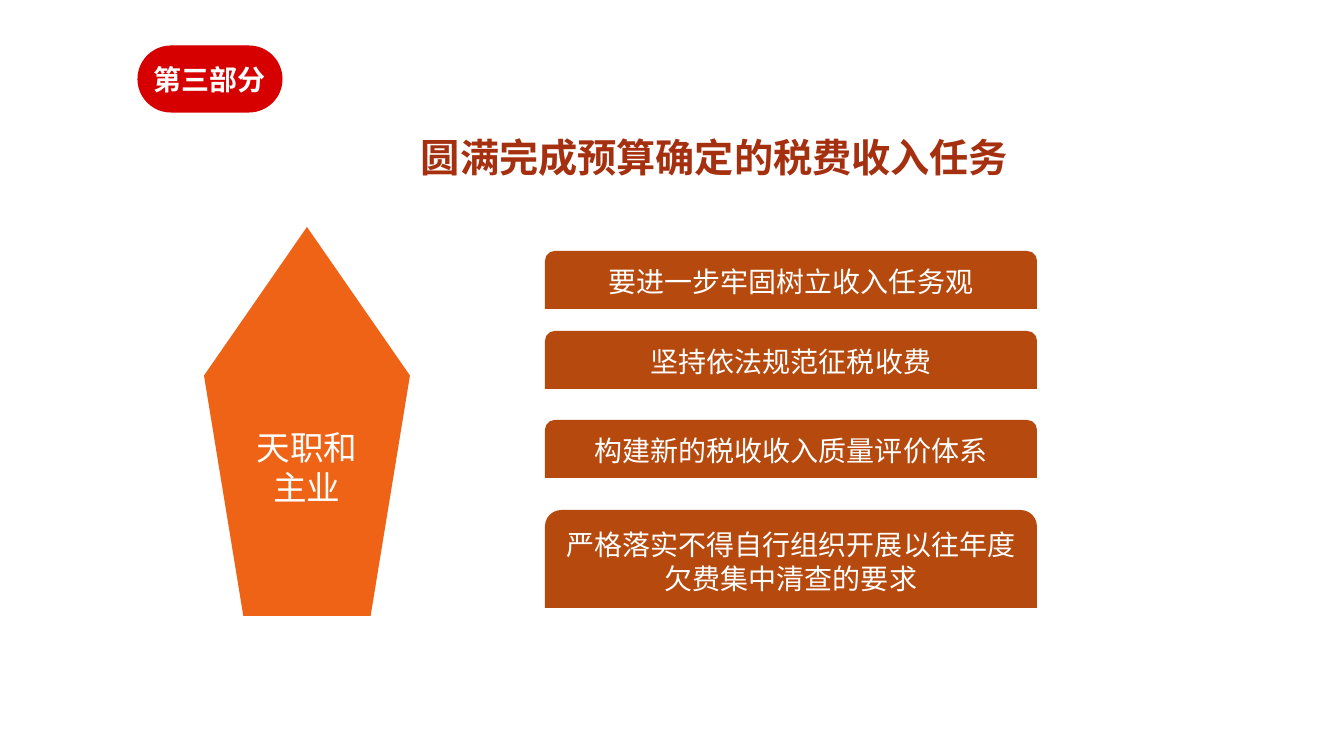
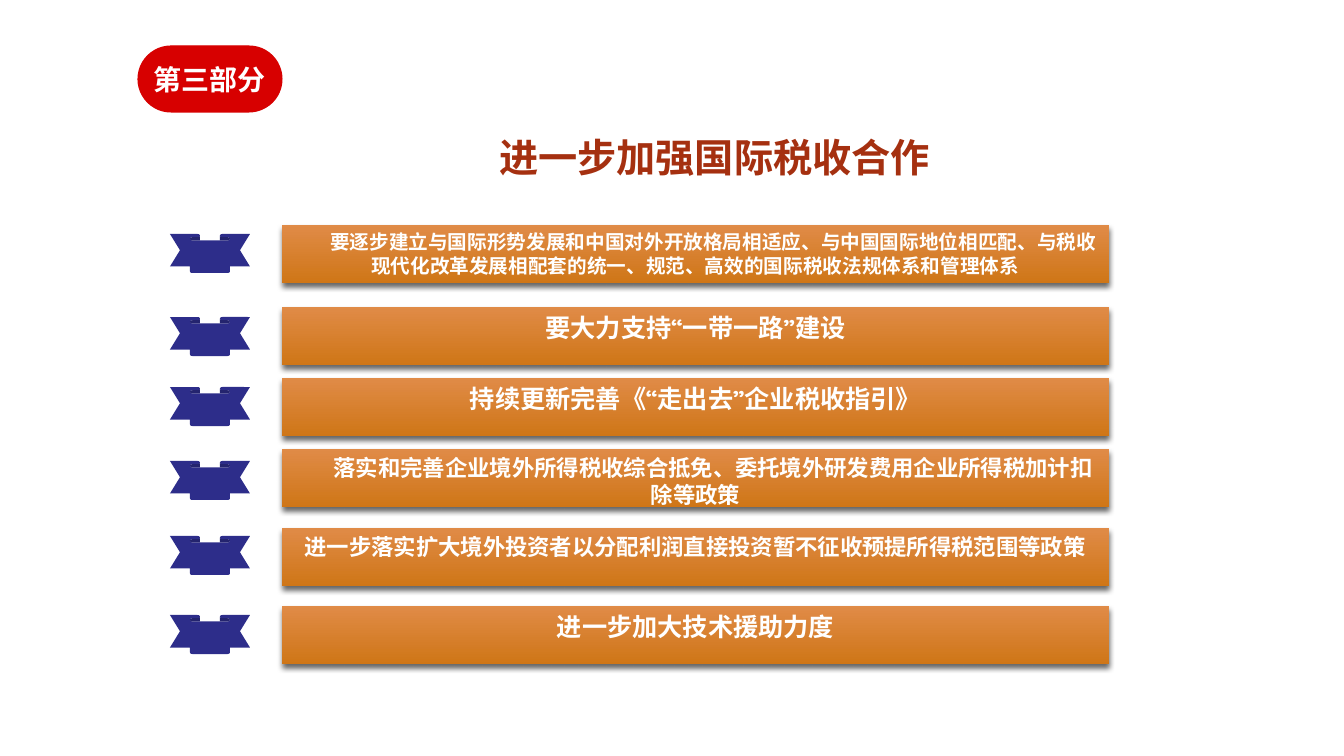
from dataclasses import dataclass

from lxml.etree import SubElement
from pptx import Presentation
from pptx.dml.color import RGBColor as RGB
from pptx.enum.shapes import MSO_SHAPE as Shape
from pptx.enum.text import MSO_ANCHOR as Anchor, MSO_AUTO_SIZE as AutoSize, PP_ALIGN as Align
from pptx.oxml.ns import qn
from pptx.util import Emu, Pt

# Content: bars as (top, height, text) and rows as (bar top, ribbon top, size, indent, text)
SECTION = "第三部分"
REVENUE_TITLE = "圆满完成预算确定的税费收入任务"
REVENUE_ROLE = "天职和主业"
REVENUE_BARS = [
    (251, 58, "要进一步牢固树立收入任务观"),
    (331, 58, "坚持依法规范征税收费"),
    (420, 58, "构建新的税收收入质量评价体系"),
    (510, 98, "严格落实不得自行组织开展以往年度欠费集中清查的要求"),
]
COOPERATION_TITLE = "进一步加强国际税收合作"
COOPERATION_ROWS = [
    (225, 234, 14, 36, "要逐步建立与国际形势发展和中国对外开放格局相适应、与中国国际地位相匹配、"
                       "与税收现代化改革发展相配套的统一、规范、高效的国际税收法规体系和管理体系"),
    (307, 317, 18, 0, "要大力支持“一带一路”建设"),
    (378, 387, 18, 0, "持续更新完善《“走出去”企业税收指引》"),
    (449, 461, 16, 36, "落实和完善企业境外所得税收综合抵免、委托境外研发费用企业所得税加计扣除等政策"),
    (528, 536, 16, 0, "进一步落实扩大境外投资者以分配利润直接投资暂不征收预提所得税范围等政策"),
    (606, 615, 18, 0, "进一步加大技术援助力度"),
]


@dataclass(frozen=True)
class Theme:
    badge: str = "D70000"
    title: str = "A53010"
    pentagon: str = "EE6316"
    bar: str = "B6490D"
    gradient: tuple = ("E08B47", "CF7617")
    ribbon: str = "2D2D8A"
    white: str = "FFFFFF"
    shadow: str = "000000"
    heading_font: str = "Noto Sans CJK SC"
    body_font: str = "Arial"
    row_font: str = "Quicksand"
    title_size: int = 28
    role_size: int = 24
    body_size: int = 20


THEME = Theme()
SLIDE_SIZE = (1344, 756)
TITLE_BOX = (229, 128, 971, 57)
BADGE_BOX = (138, 46, 144, 66)


def px(value):
    return Emu(round(value * 914400 / 100.8))


def write(shape, text, size, font_name, color=THEME.white, bold=False,
          anchor=Anchor.MIDDLE, indent=0):
    frame = shape.text_frame
    frame.word_wrap = True
    frame.vertical_anchor = anchor
    paragraph = frame.paragraphs[0]
    paragraph.alignment = Align.CENTER
    if indent:
        paragraph._p.get_or_add_pPr().set("indent", str(px(indent)))
    run = paragraph.add_run()
    run.text = text
    run.font.size = Pt(size)
    run.font.bold = bold
    run.font.color.rgb = RGB.from_string(color)
    run.font.name = font_name
    SubElement(run._r.get_or_add_rPr(), qn("a:ea"), typeface=font_name)
    return frame


def add_shape(slide, kind, box, color=None):
    shape = slide.shapes.add_shape(kind, *map(px, box))
    shape.shadow.inherit = False
    shape.line.fill.background()
    if color:
        shape.fill.solid()
        shape.fill.fore_color.rgb = RGB.from_string(color)
    return shape


def add_gradient_bar(slide, box):
    bar = add_shape(slide, Shape.RECTANGLE, box)
    bar.fill.gradient()
    bar.fill.gradient_angle = 270
    for stop, color in zip(bar.fill.gradient_stops, THEME.gradient):
        stop.color.rgb = RGB.from_string(color)
    # Soft shadow straight below
    effects = bar._element.spPr.find(qn("a:effectLst"))
    shadow = SubElement(effects, qn("a:outerShdw"), blurRad=str(Pt(4)), dist=str(Pt(3)),
                        dir="5400000", algn="t", rotWithShape="0")
    color = SubElement(shadow, qn("a:srgbClr"), val=THEME.shadow)
    SubElement(color, qn("a:alpha"), val="60000")
    return bar


def start_slide(presentation, title_text):
    """Add a slide with the shared section badge and title."""
    slide = presentation.slides.add_slide(presentation.slide_layouts[5])
    title = slide.shapes.title
    title.left, title.top, title.width, title.height = map(px, TITLE_BOX)
    frame = write(title, title_text, THEME.title_size, THEME.heading_font,
                  THEME.title, bold=True, anchor=Anchor.TOP)
    frame.word_wrap = False
    frame.auto_size = AutoSize.NONE

    badge = add_shape(slide, Shape.ROUNDED_RECTANGLE, BADGE_BOX, THEME.badge)
    badge.adjustments[0] = 0.5
    badge.line.color.rgb = RGB.from_string(THEME.badge)
    badge.line.width = Pt(0.75)
    frame = write(badge, SECTION, THEME.body_size, THEME.heading_font, bold=True)
    frame.margin_left = frame.margin_right = frame.margin_top = frame.margin_bottom = 0
    return slide


def build_revenue(presentation):
    slide = start_slide(presentation, REVENUE_TITLE)
    pentagon = add_shape(slide, Shape.REGULAR_PENTAGON, (204, 227, 206, 389), THEME.pentagon)
    write(pentagon, REVENUE_ROLE, THEME.role_size, THEME.body_font)
    for top, height, text in REVENUE_BARS:
        bar = add_shape(slide, Shape.ROUND_2_SAME_RECTANGLE, (545, top, 492, height), THEME.bar)
        write(bar, text, THEME.body_size, THEME.body_font)


def build_cooperation(presentation):
    slide = start_slide(presentation, COOPERATION_TITLE)
    for bar_top, ribbon_top, size, indent, text in COOPERATION_ROWS:
        bar = add_gradient_bar(slide, (282, bar_top, 827, 58))
        write(bar, text, size, THEME.row_font, bold=True, anchor=Anchor.TOP, indent=indent)
        add_shape(slide, Shape.DOWN_RIBBON, (170, ribbon_top, 80, 39), THEME.ribbon)


def main():
    presentation = Presentation()
    presentation.slide_width, presentation.slide_height = map(px, SLIDE_SIZE)
    build_revenue(presentation)
    build_cooperation(presentation)
    presentation.save("out.pptx")


if __name__ == "__main__":
    main()
